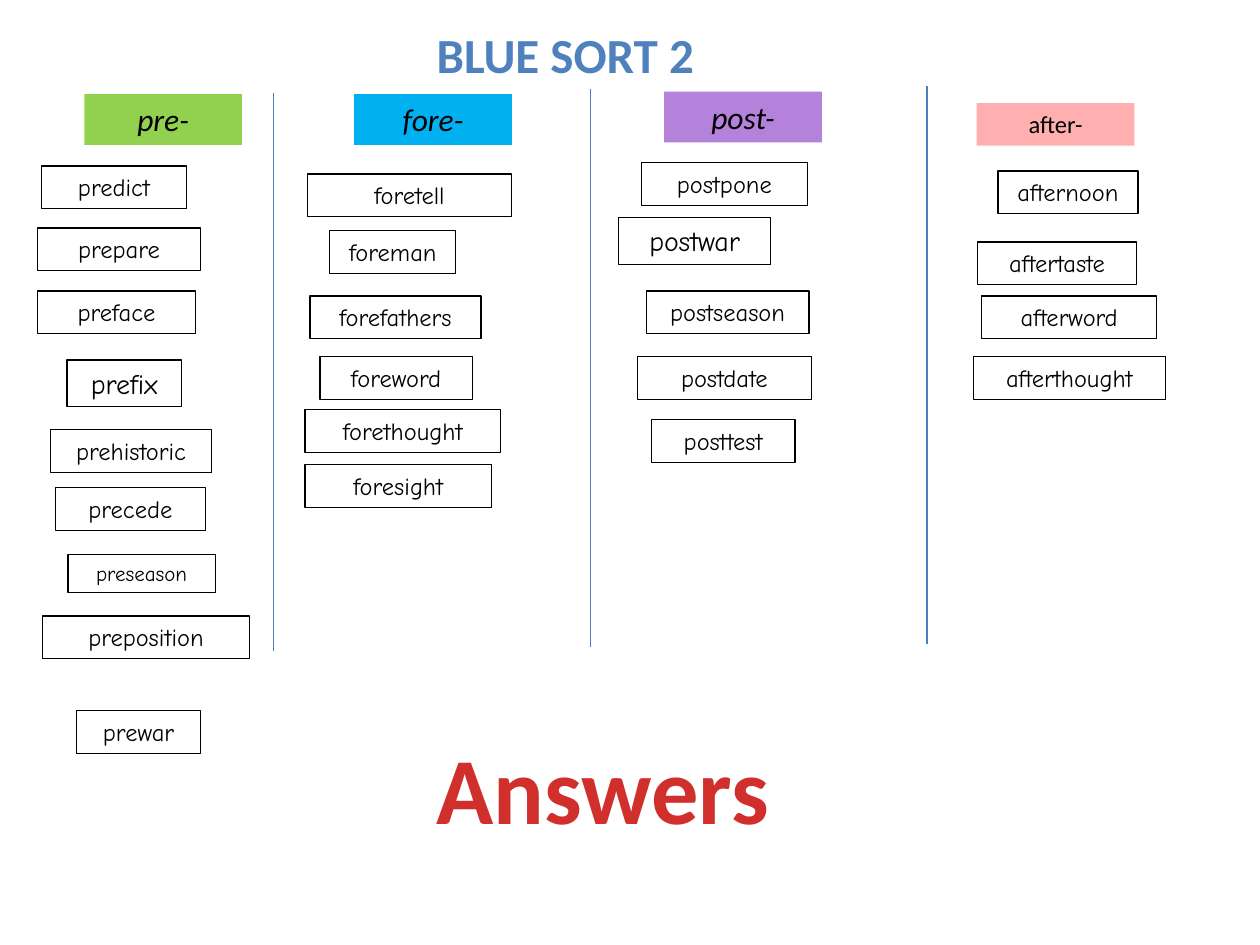
"""Build the answer slide of a word sort by prefix."""
from dataclasses import dataclass
from lxml import etree
from pptx import Presentation
from pptx.dml.color import RGBColor
from pptx.enum.shapes import MSO_CONNECTOR, MSO_SHAPE
from pptx.enum.text import MSO_ANCHOR, MSO_AUTO_SIZE, PP_ALIGN
from pptx.oxml.ns import qn
from pptx.util import Cm, Pt

RECT = MSO_SHAPE.RECTANGLE
LINE = MSO_CONNECTOR.STRAIGHT
TOP = MSO_ANCHOR.TOP
GROW = MSO_AUTO_SIZE.SHAPE_TO_FIT_TEXT
MID = PP_ALIGN.CENTER


@dataclass(frozen=True)
class Theme:
    ink: str = "000000"
    rule: str = "4B7EBC"
    title: str = "4F81BD"
    answer: str = "D02F2C"
    green: str = "92D050"
    blue: str = "00B0F0"
    violet: str = "B482DA"
    pink: str = "FFAFAF"
    sans: str = "Calibri"
    hand: str = "Comic Neue"
    small: int = 12
    body: int = 14
    large: int = 16
    head: int = 18
    name: int = 28
    huge: int = 54
    thin: float = 0.75


THEME = Theme()
HIGH = {THEME.small: 0.77, THEME.body: 0.86, THEME.large: 0.94, THEME.head: 1.02}
SIZES = {"prefix": THEME.large, "postwar": THEME.large, "preseason": THEME.small}

HEADS = [
    ("pre-", 1.7, 1.9, THEME.green, THEME.head, True),
    ("fore-", 7.14, 1.9, THEME.blue, THEME.head, True),
    ("post-", 13.39, 1.85, THEME.violet, THEME.head, True),
    ("after-", 19.69, 2.08, THEME.pink, THEME.body, False),
]

WORDS = [
    ("predict", 0.84, 3.35, 2.92),
    ("prepare", 0.76, 4.6, 3.28),
    ("preface", 0.76, 5.87, 3.18),
    ("prefix", 1.35, 7.26, 2.31),
    ("prehistoric", 1.02, 8.66, 3.25),
    ("precede", 1.12, 9.83, 3.02),
    ("preseason", 1.37, 11.18, 2.97),
    ("preposition", 0.86, 12.42, 4.17),
    ("prewar", 1.55, 14.33, 2.49),
    ("foretell", 6.2, 3.51, 4.11),
    ("foreman", 6.65, 4.65, 2.54),
    ("forefathers", 6.25, 5.97, 3.45),
    ("foreword", 6.45, 7.19, 3.07),
    ("forethought", 6.15, 8.26, 3.94),
    ("foresight", 6.15, 9.37, 3.76),
    ("postpone", 12.93, 3.28, 3.35),
    ("postwar", 12.47, 4.39, 3.07),
    ("postseason", 13.03, 5.87, 3.28),
    ("postdate", 12.85, 7.19, 3.51),
    ("posttest", 13.13, 8.46, 2.9),
    ("afternoon", 20.12, 3.45, 2.82),
    ("aftertaste", 19.71, 4.88, 3.2),
    ("afterword", 19.79, 5.97, 3.53),
    ("afterthought", 19.63, 7.19, 3.86),
]

RULES = [(5.51, 1.88), (11.91, 1.8), (18.69, 1.73)]


class Page:
    def __init__(self, slide, theme):
        self.slide = slide
        self.theme = theme

    def text(self, shape, words, size, face, color, bold=False, slant=False, wrap=True):
        frame = shape.text_frame
        frame.word_wrap = wrap
        frame.auto_size = GROW
        frame.vertical_anchor = TOP
        para = frame.paragraphs[0]
        para.alignment = MID
        run = para.add_run()
        run.text = words
        font = run.font
        font.name, font.size = face, Pt(size)
        font.bold, font.italic = bold, slant
        font.color.rgb = RGBColor.from_string(color)

    def box(self, left, top, width, size):
        shape = self.slide.shapes.add_shape(
            RECT, Cm(left), Cm(top), Cm(width), Cm(HIGH[size]))
        shape.shadow.inherit = False
        return shape

    def head(self, words, left, top, color, size, slant):
        shape = self.box(left, top, 3.18, size)
        shape.fill.solid()
        shape.fill.fore_color.rgb = RGBColor.from_string(color)
        shape.line.fill.background()
        self.text(shape, words, size, self.theme.sans, self.theme.ink, slant=slant)

    def word(self, words, left, top, width):
        size = SIZES.get(words, self.theme.body)
        shape = self.box(left, top, width, size)
        shape.fill.background()
        shape.line.color.rgb = RGBColor.from_string(self.theme.ink)
        shape.line.width = Pt(self.theme.thin)
        self.text(shape, words, size, self.theme.hand, self.theme.ink)

    def rule(self, left, top):
        line = self.slide.shapes.add_connector(
            LINE, Cm(left), Cm(top), Cm(left), Cm(top + 11.25))
        line.line.color.rgb = RGBColor.from_string(self.theme.rule)
        line.line.width = Pt(self.theme.thin)
        etree.SubElement(line._element.spPr, qn("a:effectLst"))

    def label(self, words, left, top, width, height, size, color, wrap=True):
        shape = self.slide.shapes.add_textbox(
            Cm(left), Cm(top), Cm(width), Cm(height))
        self.text(shape, words, size, self.theme.sans, color, bold=True, wrap=wrap)


def main():
    deck = Presentation()
    deck.slide_width, deck.slide_height = Cm(25.4), Cm(19.05)
    page = Page(deck.slides.add_slide(deck.slide_layouts[6]), THEME)
    for head in HEADS:
        page.head(*head)
    for rule in RULES:
        page.rule(*rule)
    for word in WORDS:
        page.word(*word)
    page.label("BLUE SORT 2", 5.54, 0.36, 11.71, 1.45, THEME.name, THEME.title)
    page.label("Answers", 8.51, 14.6, 7.29, 2.57, THEME.huge, THEME.answer, wrap=False)
    deck.save("out.pptx")


if __name__ == "__main__":
    main()
